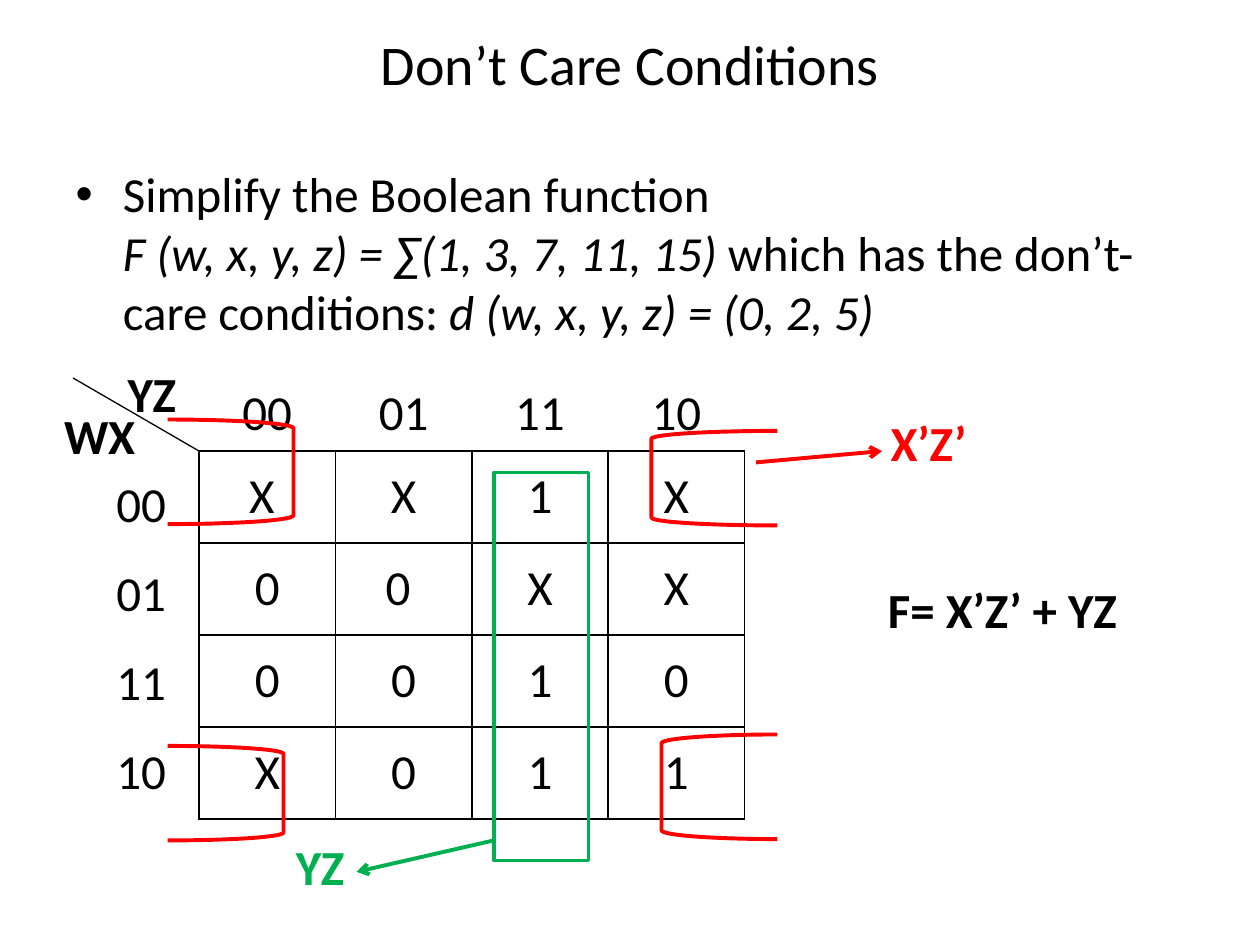
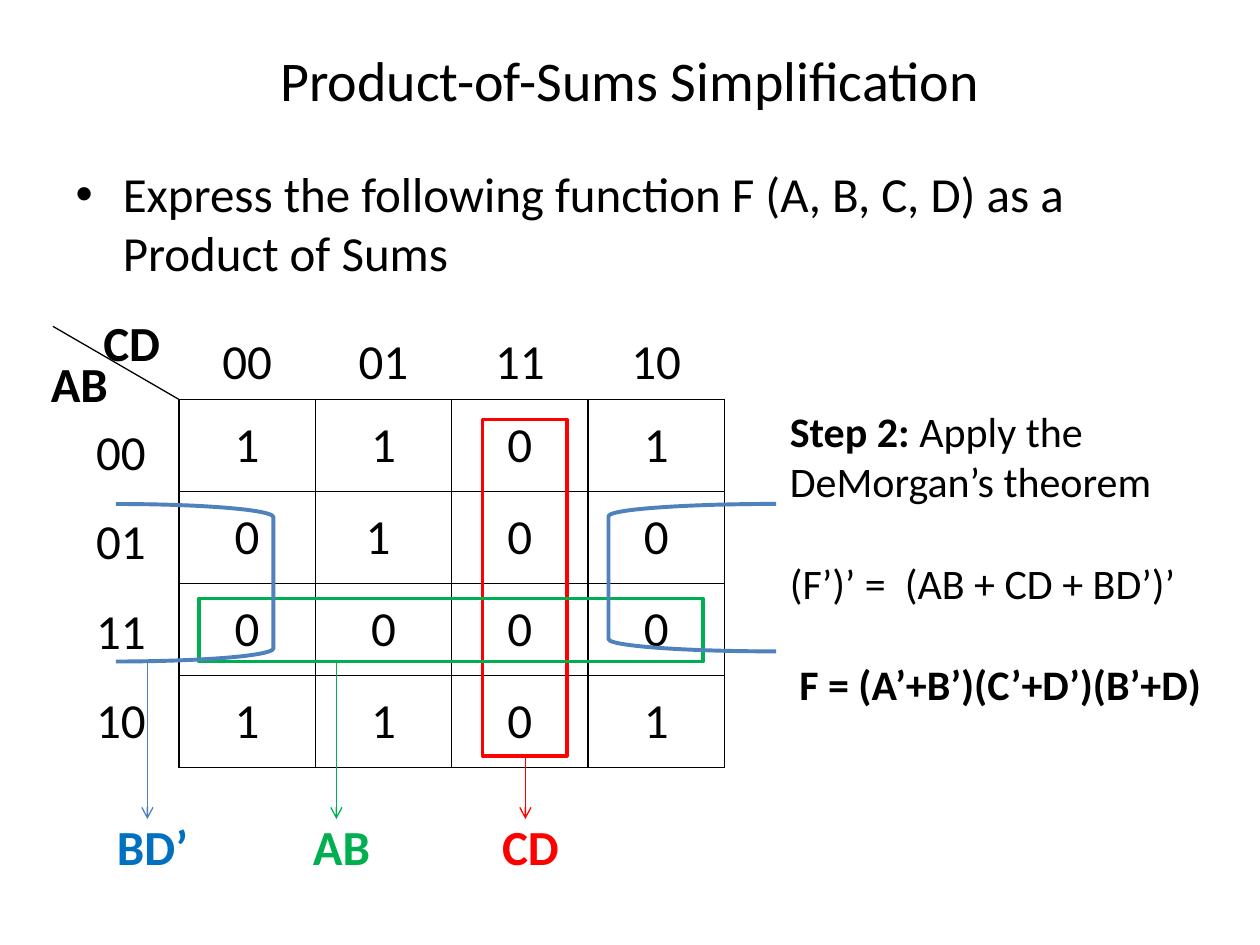
from lxml import etree
from pptx import Presentation
from pptx import util as u
from pptx.dml.color import RGBColor
from pptx.enum import shapes, text
from pptx.oxml.ns import qn

Inches, Pt, rgb = u.Inches, u.Pt, RGBColor.from_string
FONT = "Calibri"
BLACK, RED, GREEN, BLUE = "000000", "FF0000", "00B050", "4F81BD"
LABEL_BLUE, ARROW_BLUE = "0070C0", "4B7EBC"
NO_STYLE = "{2D5ABB26-0587-4C30-8999-92F81FD0307C}"
RECT = shapes.MSO_SHAPE.RECTANGLE
LEFT = shapes.MSO_SHAPE.LEFT_BRACKET
RIGHT = shapes.MSO_SHAPE.RIGHT_BRACKET
GRAY_CODE = ["00", "01", "11", "10"]


def style_paragraph(p, size, colour=BLACK, bold=None, align=None):
    p.font.name, p.font.size, p.font.bold = FONT, Pt(size), bold
    p.font.color.rgb = rgb(colour)
    p.alignment = align


def style_line(shape, colour, width, arrow=False):
    shape.line.color.rgb = rgb(colour)
    shape.line.width = Pt(width)
    if arrow:
        etree.SubElement(shape.line._get_or_add_ln(), qn("a:tailEnd"), type="arrow")
    etree.SubElement(shape._element.spPr, qn("a:effectLst"))


# Content: body runs are (text, italic); labels, loops and arrows carry their places
slides = [
    dict(
        title="Don’t Care Conditions", title_height=1, body_height=5.83,
        body=[("Simplify the Boolean function \v", False),
              ("F (w, x, y, z) = ∑(1, 3, 7, 11, 15) ", True),
              ("which has the don’t-care conditions: ", False),
              ("d (w, x, y, z) = (0, 2, 5)", True)],
        origin=(1.58, 3.58), column_name="YZ", row_name="WX",
        cells=[["X ", "X", "1", "X"], ["0", "0 ", "X", "X"],
               ["0", "0", "1", "0"], ["X", "0", "1", "1"]],
        loops=[(RECT, 3.92, 3.75, 0.75, 3.08, GREEN),
               (LEFT, 5.17, 3.42, 1, 0.75, RED),
               (LEFT, 5.25, 5.83, 0.92, 0.83, RED),
               (RIGHT, 1.33, 5.92, 0.92, 0.75, RED),
               (RIGHT, 1.33, 3.33, 1, 0.83, RED)],
        arrow_width=2.25,
        arrows=[(6, 3.67, 7, 3.58, RED), (3.92, 6.67, 2.83, 6.92, GREEN)],
        labels=[("YZ", 2.08, 6.58, 0.92, 0.58, GREEN),
                ("X’Z’", 6.83, 3.17, 1.08, 0.67, RED),
                ("F= X’Z’ + YZ", 6.58, 4.5, 2.75, 0.67, BLACK)],
        steps=[]),
    dict(
        title="Product-of-Sums Simplification", title_height=1.25, body_height=5.45,
        body=[("Express the following function F (A, B, C, D) as a Product of Sums", False)],
        origin=(1.42, 3.17), column_name="CD", row_name="AB",
        cells=[["1", "1", "0", "1"], ["0", "1 ", "0", "0"],
               ["0", "0", "0", "0"], ["1", "1", "0", "1"]],
        loops=[(RECT, 3.83, 3.33, 0.67, 2.67, RED),
               (RECT, 1.58, 4.75, 4, 0.5, GREEN),
               (LEFT, 4.83, 4, 1.33, 1.17, BLUE),
               (RIGHT, 0.92, 4, 1.25, 1.25, BLUE)],
        arrow_width=0.75,
        arrows=[(2.67, 5.25, 2.67, 6.5, GREEN), (4.17, 6, 4.17, 6.5, RED),
                (1.17, 5.25, 1.17, 6.5, ARROW_BLUE)],
        labels=[("BD’", 0.67, 6.42, 1.08, 0.58, LABEL_BLUE),
                ("AB", 2.17, 6.42, 1.08, 0.58, GREEN),
                ("CD", 3.75, 6.42, 0.92, 0.58, RED)],
        steps=[[("Step 2: ", True), ("Apply the DeMorgan’s theorem", False)],
               [("(F’)’ =  (AB + CD + BD’)’", False)],
               [(" F = (A’+B’)(C’+D’)(B’+D)", True)]]),
]

prs = Presentation()
prs.slide_width, prs.slide_height = Inches(10), Inches(7.5)

for d in slides:
    s = prs.slides.add_slide(prs.slide_layouts[1])
    x, y = d["origin"]

    # Title and body
    title, body = s.placeholders
    for ph, top, height in [(title, 0, d["title_height"]), (body, 1.25, d["body_height"])]:
        ph.left, ph.top = Inches(0.5), Inches(top)
        ph.width, ph.height = Inches(9), Inches(height)
    title.text_frame.text = d["title"]
    style_paragraph(title.text_frame.paragraphs[0], 32, align=text.PP_ALIGN.CENTER)
    p = body.text_frame.paragraphs[0]
    style_paragraph(p, 28)
    for words, italic in d["body"]:
        r = p.add_run()
        r.text = words.rstrip("\v")
        r.font.italic = italic
        if words.endswith("\v"):
            p.add_line_break()

    # Karnaugh map with its column and row headings
    column_heads, row_heads = [GRAY_CODE], [[code] for code in GRAY_CODE]
    for rows, left, top, width, height, ruled in [
            (d["cells"], x, y, 4.33, 2.92, True),
            (column_heads, x, y - 0.58, 4.33, 0.57, False),
            (row_heads, x - 0.92, y + 0.08, 0.92, 2.83, False)]:
        table = s.shapes.add_table(len(rows), len(rows[0]), Inches(left), Inches(top),
                                   Inches(width), Inches(height)).table
        table.first_row = table.horz_banding = False
        table._tbl.tblPr.find(qn("a:tableStyleId")).text = NO_STYLE
        for cell, value in zip(table.iter_cells(), sum(rows, [])):
            cell.text = value
            style_paragraph(cell.text_frame.paragraphs[0], 28, align=text.PP_ALIGN.CENTER)
            if rows is not column_heads:
                cell.vertical_anchor = text.MSO_ANCHOR.MIDDLE
            cell.fill.background()
            if ruled:
                for i, side in enumerate(["lnL", "lnR", "lnT", "lnB"]):
                    ln = etree.Element(qn("a:" + side), w=str(Pt(1)))
                    fill = etree.SubElement(ln, qn("a:solidFill"))
                    etree.SubElement(fill, qn("a:srgbClr"), val=BLACK)
                    cell._tc.tcPr.insert(i, ln)

    # Corner slash and arrows
    slash = (x, y, x - 1, y - 0.58, BLACK)
    for *ends, colour in [slash] + d["arrows"]:
        is_arrow = (*ends, colour) != slash
        line = s.shapes.add_connector(shapes.MSO_CONNECTOR.STRAIGHT, *map(Inches, ends))
        style_line(line, colour, d["arrow_width"] if is_arrow else 0.75, is_arrow)

    # Variable names and term labels
    names = [(d["column_name"], x - 0.75, y - 0.75, 0.75, 0.58, BLACK),
             (d["row_name"], x - 1.33, y - 0.42, 1.08, 0.58, BLACK)]
    for words, *box, colour in names + d["labels"]:
        tf = s.shapes.add_textbox(*map(Inches, box)).text_frame
        tf.word_wrap, tf.vertical_anchor = True, text.MSO_ANCHOR.MIDDLE
        tf.text = words
        style_paragraph(tf.paragraphs[0], 28, colour, True, text.PP_ALIGN.CENTER)

    # Worked steps beside the map
    if d["steps"]:
        tf = s.shapes.add_textbox(*map(Inches, (6.17, 3.17, 3.58, 2.83))).text_frame
        tf.word_wrap = True
        for i, runs in enumerate(d["steps"]):
            p = tf.add_paragraph() if i else tf.paragraphs[0]
            style_paragraph(p, 24)
            p.space_before = Pt(29 if i else 0)
            for words, bold in runs:
                r = p.add_run()
                r.text, r.font.bold = words, bold

    # Loops around the grouped cells
    for kind, *box, colour in d["loops"]:
        loop = s.shapes.add_shape(kind, *map(Inches, box))
        loop.fill.background()
        style_line(loop, colour, 2 if kind == RECT else 2.25)

prs.save("out.pptx")
